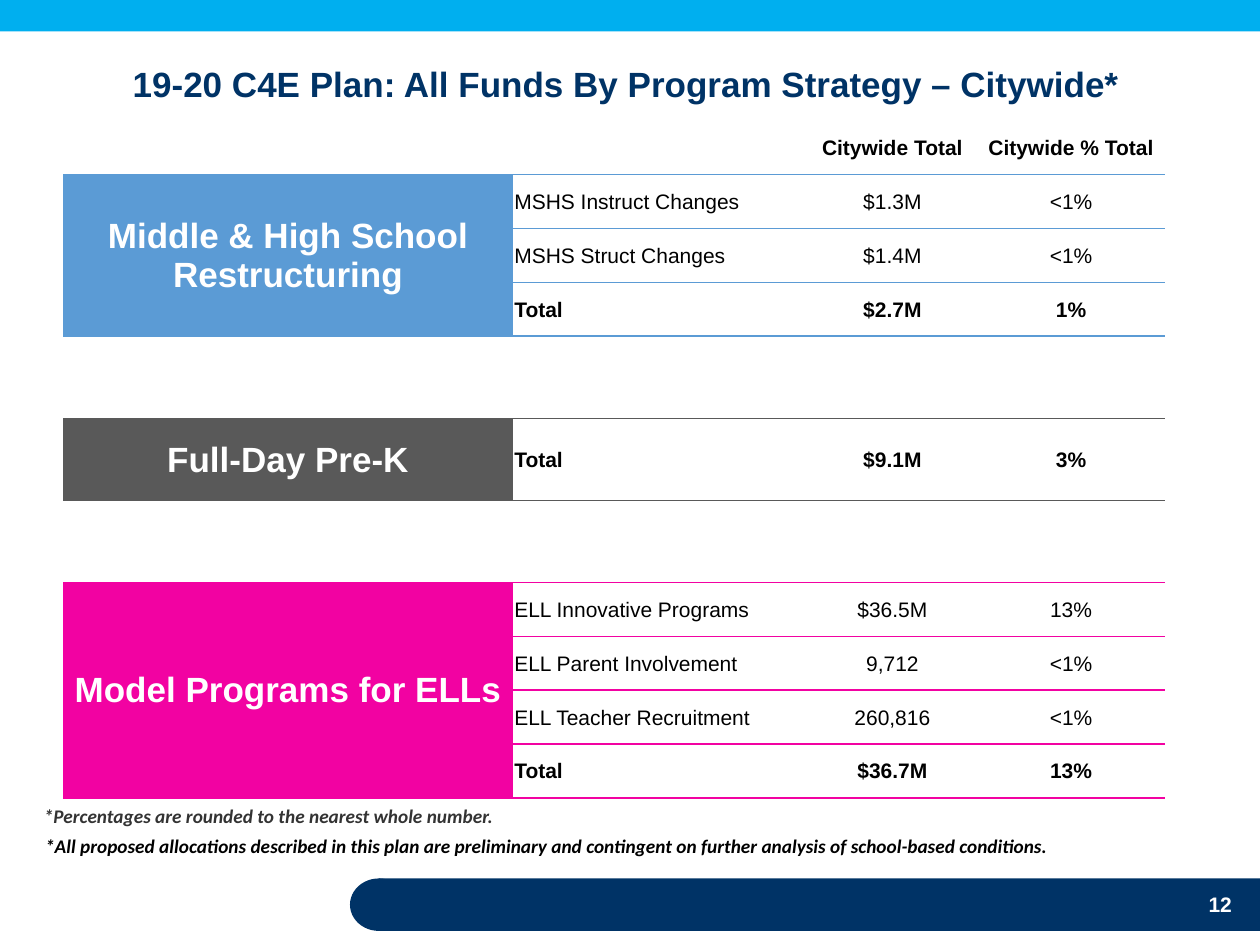
from dataclasses import dataclass

from lxml import etree
from pptx import Presentation
from pptx.dml.color import RGBColor
from pptx.enum.shapes import MSO_SHAPE
from pptx.enum.text import MSO_ANCHOR, PP_ALIGN
from pptx.oxml.ns import qn
from pptx.util import Pt

LEFT, CENTER, RIGHT = PP_ALIGN.LEFT, PP_ALIGN.CENTER, PP_ALIGN.RIGHT
MIDDLE = MSO_ANCHOR.MIDDLE
RECTANGLE, OVAL = MSO_SHAPE.RECTANGLE, MSO_SHAPE.OVAL


@dataclass(frozen=True)
class Theme:
    navy: str = "003366"
    sky: str = "00AFEF"
    blue: str = "5B9BD5"
    gray: str = "595959"
    magenta: str = "F202A2"
    white: str = "FFFFFF"
    black: str = "000000"
    charcoal: str = "333333"
    heading: float = 20
    body: float = 12
    note: float = 11
    font: str = "Arial"
    note_font: str = "Calibri"


THEME = Theme()


@dataclass(frozen=True)
class TextStyle:
    size: float
    color: str
    bold: bool = True
    italic: bool = False
    font: str = THEME.font
    align: PP_ALIGN = LEFT


@dataclass(frozen=True)
class Box:
    left: float
    top: float
    width: float
    height: float

    def lengths(self) -> tuple:
        return Pt(self.left), Pt(self.top), Pt(self.width), Pt(self.height)


@dataclass(frozen=True)
class Strategy:
    name: str
    color: str
    row_height: float
    programs: tuple


ROW_HEIGHT, TALL_ROW = 30.8, 46.9
COLUMN_WIDTHS = (257.2, 168.4, 96.8, 107.4)
HEADERS = ("", "", "Citywide Total", "Citywide % Total")
STRATEGIES = (
    Strategy("Middle & High School Restructuring", THEME.blue, ROW_HEIGHT, (
        ("MSHS Instruct Changes", "$1.3M", "<1%"),
        ("MSHS Struct Changes", "$1.4M", "<1%"),
        ("Total", "$2.7M", "1%"),
    )),
    Strategy("Full-Day Pre-K", THEME.gray, TALL_ROW, (
        ("Total", "$9.1M", "3%"),
    )),
    Strategy("Model Programs for ELLs", THEME.magenta, ROW_HEIGHT, (
        ("ELL Innovative Programs", "$36.5M", "13%"),
        ("ELL Parent Involvement", "9,712", "<1%"),
        ("ELL Teacher Recruitment", "260,816", "<1%"),
        ("Total", "$36.7M", "13%"),
    )),
)


def write(frame, text: str, style: TextStyle) -> None:
    paragraph = frame.paragraphs[0]
    paragraph.text = text
    paragraph.alignment = style.align
    paragraph.font.name = style.font
    paragraph.font.size = Pt(style.size)
    paragraph.font.bold = style.bold
    paragraph.font.italic = style.italic
    paragraph.font.color.rgb = RGBColor.from_string(style.color)


def add_text(slide, box: Box, text: str, style: TextStyle, inset: bool = True) -> None:
    frame = slide.shapes.add_textbox(*box.lengths()).text_frame
    frame.word_wrap = True
    if not inset:
        frame.margin_left = frame.margin_right = 0
        frame.margin_top = frame.margin_bottom = 0
    write(frame, text, style)


def add_band(slide, kind: MSO_SHAPE, box: Box, color: str) -> None:
    band = slide.shapes.add_shape(kind, *box.lengths())
    band.shadow.inherit = False
    band.fill.solid()
    band.fill.fore_color.rgb = RGBColor.from_string(color)
    band.line.fill.background()


def set_border(cell, side: str, color: str | None) -> None:
    line = etree.SubElement(cell._tc.get_or_add_tcPr(), qn(f"a:ln{side}"), w=str(Pt(1)))
    if color is None:
        etree.SubElement(line, qn("a:noFill"))
    else:
        fill = etree.SubElement(line, qn("a:solidFill"))
        etree.SubElement(fill, qn("a:srgbClr"), val=color)


def style_row(table, row: int, height: float, above: str | None, below: str) -> None:
    table.rows[row].height = Pt(height)
    for cell in table.rows[row].cells:
        cell.margin_left = cell.margin_top = cell.margin_right = Pt(0.72)
        cell.margin_bottom = 0
        cell.vertical_anchor = MIDDLE
        for side, color in (("L", None), ("R", None), ("T", above), ("B", below)):
            set_border(cell, side, color)
        cell.fill.background()


def fill_strategy(table, start: int, strategy: Strategy) -> None:
    for row, program in enumerate(strategy.programs, start):
        style_row(table, row, strategy.row_height, strategy.color, strategy.color)
        for column, text in enumerate(program, 1):
            style = TextStyle(THEME.body, THEME.black, bold=program[0] == "Total",
                              align=LEFT if column == 1 else CENTER)
            write(table.cell(row, column).text_frame, text, style)
    label = table.cell(start, 0)
    if len(strategy.programs) > 1:
        label.merge(table.cell(start + len(strategy.programs) - 1, 0))
    label.fill.solid()
    label.fill.fore_color.rgb = RGBColor.from_string(strategy.color)
    write(label.text_frame, strategy.name,
          TextStyle(THEME.heading, THEME.white, align=CENTER))


def add_funds_table(slide) -> None:
    row_count = sum(len(s.programs) + 1 for s in STRATEGIES)
    box = Box(36, 69, sum(COLUMN_WIDTHS), 387.1)
    table = slide.shapes.add_table(row_count, len(COLUMN_WIDTHS), *box.lengths()).table
    table.first_row = table.horz_banding = False
    for column, width in zip(table.columns, COLUMN_WIDTHS):
        column.width = Pt(width)

    row, above = 0, None
    for strategy in STRATEGIES:
        style_row(table, row, TALL_ROW if row else ROW_HEIGHT, above, strategy.color)
        fill_strategy(table, row + 1, strategy)
        row += len(strategy.programs) + 1
        above = strategy.color

    for column, text in enumerate(HEADERS):
        if text:
            write(table.cell(0, column).text_frame, text,
                  TextStyle(THEME.body, THEME.black, align=CENTER))


def main() -> None:
    deck = Presentation()
    deck.slide_width, deck.slide_height = Pt(720), Pt(540)
    slide = deck.slides.add_slide(deck.slide_layouts[6])

    add_band(slide, RECTANGLE, Box(216.5, 502, 503.5, 30), THEME.navy)
    add_band(slide, OVAL, Box(200, 502, 33, 30), THEME.navy)
    add_band(slide, RECTANGLE, Box(0, 0, 720, 18), THEME.sky)

    add_text(slide, Box(633, 506, 78, 18), "12",
             TextStyle(THEME.body, THEME.white, align=RIGHT))
    add_text(slide, Box(10, 36, 695.5, 24.5),
             "19-20 C4E Plan: All Funds By Program Strategy – Citywide*",
             TextStyle(THEME.heading, THEME.navy, align=CENTER), inset=False)
    add_text(slide, Box(18.7, 473, 678, 21),
             "*All proposed allocations described in this plan are preliminary and "
             "contingent on further analysis of school-based conditions.",
             TextStyle(THEME.note, THEME.black, italic=True, font=THEME.note_font))
    add_text(slide, Box(18, 456, 330, 21),
             "*Percentages are rounded to the nearest whole number.",
             TextStyle(THEME.note, THEME.charcoal, italic=True, font=THEME.note_font))
    add_funds_table(slide)

    deck.save("out.pptx")


if __name__ == "__main__":
    main()
